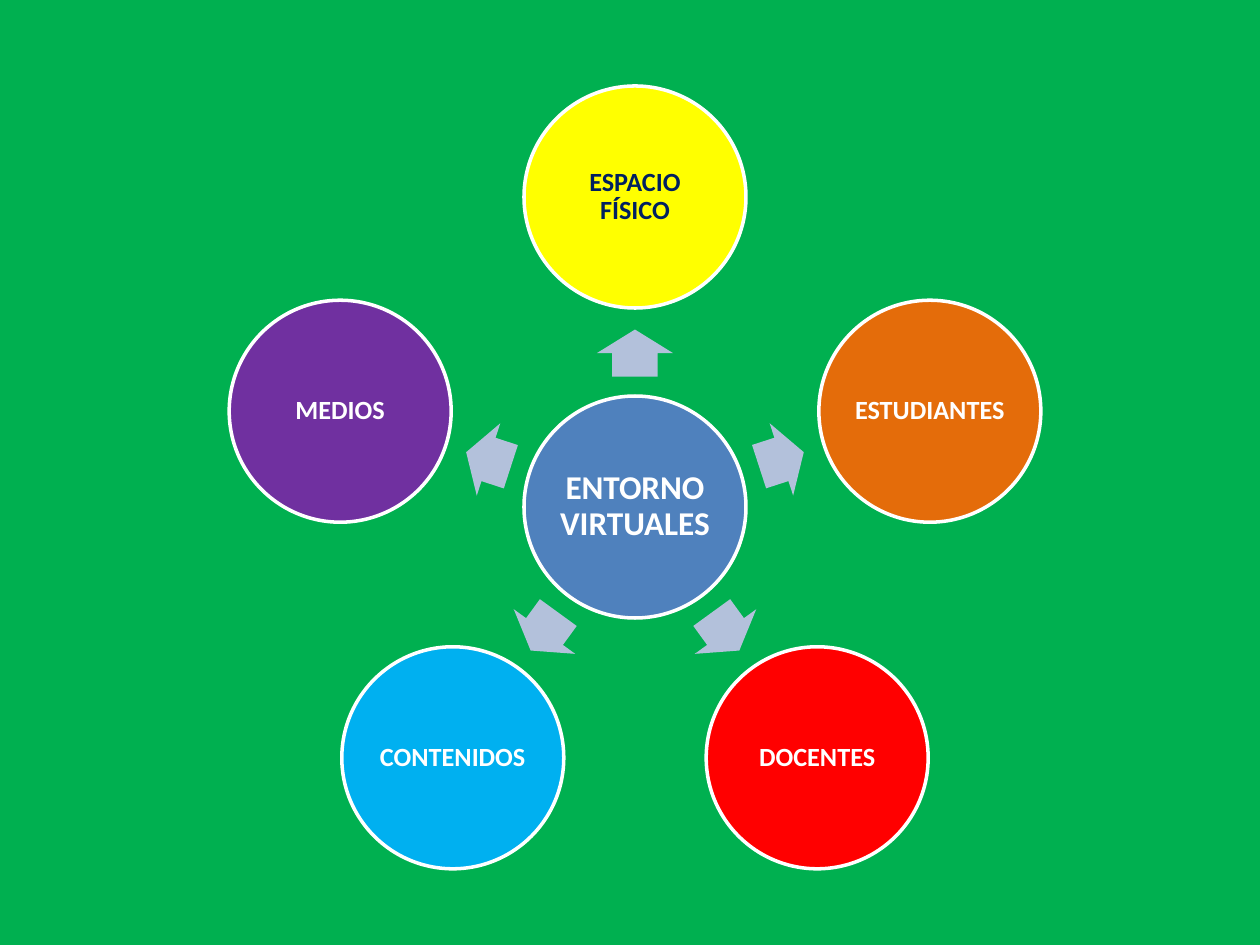
from math import cos, radians, sin

from pptx import Presentation
from pptx.dml.color import RGBColor
from pptx.enum.shapes import MSO_SHAPE as Preset
from pptx.enum.text import MSO_ANCHOR as Anchor, PP_ALIGN as Align
from pptx.util import Emu, Pt

EMU_PER_PX = 914400 / 126
CIRCLE = 222
ARROW_LENGTH, ARROW_WIDTH = 47, 76
ARROW_ORBIT, TOPIC_ORBIT = 154, 310
DIAGRAM_BOX = (229, 86, 812, 783)

TOPICS = [
    ("ESPACIO FÍSICO", "FFFF00", "002060"),
    ("ESTUDIANTES", "E46C0A", "FFFFFF"),
    ("DOCENTES", "FF0000", "FFFFFF"),
    ("CONTENIDOS", "00B0F0", "FFFFFF"),
    ("MEDIOS", "7030A0", "FFFFFF"),
]


def px(length):
    return Emu(round(length * EMU_PER_PX))


def paint(fill, color):
    fill.solid()
    fill.fore_color.rgb = RGBColor.from_string(color)


def set_all(target, values):
    for key, value in values.items():
        setattr(target, key, value)


def add_centred(slide, preset, center, width, height, color):
    """Add a filled preset shape around its center point."""
    x, y = center
    shape = slide.shapes.add_shape(
        preset, px(x - width / 2), px(y - height / 2), px(width), px(height))
    shape.shadow.inherit = False
    paint(shape.fill, color)
    return shape


def add_circle(slide, center, label, color, text_color, size):
    circle = add_centred(slide, Preset.OVAL, center, CIRCLE, CIRCLE, color)
    paint(circle.line.fill, "FFFFFF")
    circle.line.width = Pt(2)

    frame = circle.text_frame
    sides = ("left", "top", "right", "bottom")
    set_all(frame, {f"margin_{side}": px(2) for side in sides})
    set_all(frame, {"word_wrap": True, "vertical_anchor": Anchor.MIDDLE})
    paragraph = frame.paragraphs[0]
    set_all(paragraph, {"alignment": Align.CENTER, "line_spacing": 0.9})
    run = paragraph.add_run()
    run.text = label
    set_all(run.font, {"name": "Calibri", "size": Pt(size), "bold": True})
    paint(run.font.fill, text_color)


def add_arrow(slide, center, angle):
    arrow = add_centred(slide, Preset.RIGHT_ARROW, center,
                        ARROW_LENGTH, ARROW_WIDTH, "B3C1DB")
    arrow.line.fill.background()
    arrow.adjustments[0] = 0.6
    arrow.adjustments[1] = 0.5
    arrow.rotation = angle % 360


def add_radial_diagram(slide, box):
    """Place the hub below the top topic, with topics evenly around it."""
    left, top, width, _ = box
    hub_x = left + width / 2
    hub_y = top + CIRCLE / 2 + TOPIC_ORBIT

    def orbit_point(radius, angle):
        turn = radians(angle)
        return hub_x + radius * cos(turn), hub_y + radius * sin(turn)

    add_circle(slide, (hub_x, hub_y), "ENTORNO VIRTUALES",
               "4F81BD", "FFFFFF", 19)
    for index, (label, color, text_color) in enumerate(TOPICS):
        angle = index * 360 / len(TOPICS) - 90
        add_arrow(slide, orbit_point(ARROW_ORBIT, angle), angle)
        add_circle(slide, orbit_point(TOPIC_ORBIT, angle),
                   label, color, text_color, 15)


def main():
    deck = Presentation()
    set_all(deck, {"slide_width": px(1260), "slide_height": px(945)})
    slide = deck.slides.add_slide(deck.slide_layouts[6])
    paint(slide.background.fill, "00B050")
    add_radial_diagram(slide, DIAGRAM_BOX)
    deck.save("out.pptx")


if __name__ == "__main__":
    main()
